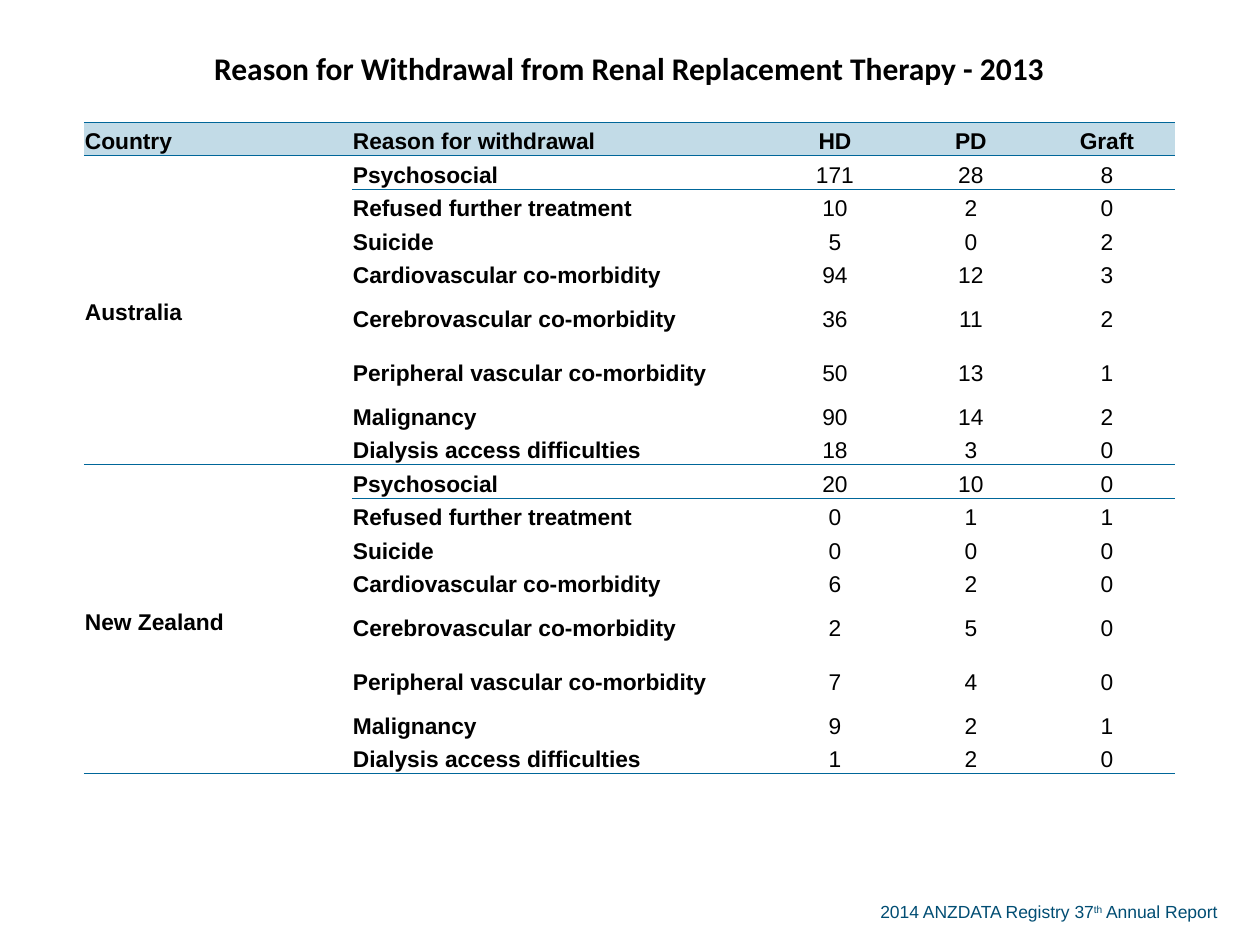
from lxml.etree import SubElement
from pptx import Presentation
from pptx.dml.color import RGBColor
from pptx.enum.text import MSO_ANCHOR, MSO_AUTO_SIZE, PP_ALIGN
from pptx.oxml.ns import qn
from pptx.util import Emu, Pt

PX = 914400 // 126
NO_STYLE_NO_GRID = "{2D5ABB26-0587-4C30-8999-92F81FD0307C}"

TITLE = "Reason for Withdrawal from Renal Replacement Therapy - 2013"
HEADINGS = ["Country", "Reason for withdrawal", "HD", "PD", "Graft"]
REASONS = [
    "Psychosocial",
    "Refused further treatment",
    "Suicide",
    "Cardiovascular co-morbidity",
    "Cerebrovascular co-morbidity",
    "Peripheral vascular co-morbidity",
    "Malignancy",
    "Dialysis access difficulties",
]
COUNTS = {
    "Australia": [(171, 28, 8), (10, 2, 0), (5, 0, 2), (94, 12, 3),
                  (36, 11, 2), (50, 13, 1), (90, 14, 2), (18, 3, 0)],
    "New Zealand": [(20, 10, 0), (0, 1, 1), (0, 0, 0), (6, 2, 0),
                    (2, 5, 0), (7, 4, 0), (9, 2, 1), (1, 2, 0)],
}
TALL_REASONS = REASONS[4:6]
COLUMN_WIDTHS = [268, 415, 136, 136, 136]
TITLE_HEIGHT, ROW_HEIGHT, TALL_HEIGHT = 106, 33, 54


def px(length):
    return Emu(length * PX)


def color(hex_string):
    return RGBColor.from_string(hex_string)


class SlideBuilder:
    font = "Arial"
    title_font = "Calibri"
    text = "000000"
    footer = "004D73"
    rule = "006699"
    header_fill = "C2DBE7"

    def __init__(self, slide):
        self.slide = slide

    def set_font(self, paragraph, size, hex_string, bold=False, name=None):
        font = paragraph.font
        font.name = name or self.font
        font.size = Pt(size)
        font.bold = bold
        font.color.rgb = color(hex_string)

    def table(self, left, top, widths, heights):
        frame = self.slide.shapes.add_table(
            len(heights), len(widths), px(left), px(top), px(sum(widths)), px(sum(heights)))
        table = frame.table
        table.first_row = table.horz_banding = False
        frame._element.find(".//" + qn("a:tableStyleId")).text = NO_STYLE_NO_GRID
        for column, width in zip(table.columns, widths):
            column.width = px(width)
        for row, height in zip(table.rows, heights):
            row.height = px(height)
        return table

    def cell(self, cell, text, bold=True, centered=False, edges="", fill=None):
        """Fill a body cell; edges names the ruled sides, T before B."""
        cell.text = text
        cell.vertical_anchor = MSO_ANCHOR.MIDDLE
        cell.margin_left = cell.margin_right = cell.margin_top = px(1)
        cell.margin_bottom = 0
        paragraph = cell.text_frame.paragraphs[0]
        paragraph.alignment = PP_ALIGN.CENTER if centered else PP_ALIGN.LEFT
        paragraph.line_spacing = 1.19
        paragraph.space_after = Pt(14)
        self.set_font(paragraph, 13, self.text, bold)
        for edge in edges:
            self.border(cell, edge)
        if fill:
            cell.fill.solid()
            cell.fill.fore_color.rgb = color(fill)
        else:
            cell.fill.background()

    def border(self, cell, edge):
        line = SubElement(cell._tc.get_or_add_tcPr(), qn(f"a:ln{edge}"), w=str(Pt(0.5)))
        SubElement(SubElement(line, qn("a:solidFill")), qn("a:srgbClr"), val=self.rule)

    def title_cell(self, cell, text):
        self.cell(cell, text, centered=True, edges="B")
        paragraph = cell.text_frame.paragraphs[0]
        paragraph.line_spacing = 1.0
        paragraph.space_after = Pt(0)
        self.set_font(paragraph, 18, self.text, True, self.title_font)

    def footer_text(self, left, top, width, height, before, superscript, after):
        box = self.slide.shapes.add_textbox(px(left), px(top), px(width), px(height))
        frame = box.text_frame
        frame.word_wrap = True
        frame.auto_size = MSO_AUTO_SIZE.SHAPE_TO_FIT_TEXT
        paragraph = frame.paragraphs[0]
        self.set_font(paragraph, 10, self.footer)
        for text in (before, superscript, after):
            run = paragraph.add_run()
            run.text = text
            if text == superscript:
                run._r.get_or_add_rPr().set("baseline", "30000")


def main():
    presentation = Presentation()
    presentation.slide_width, presentation.slide_height = px(1260), px(945)
    builder = SlideBuilder(presentation.slides.add_slide(presentation.slide_layouts[6]))

    builder.footer_text(868, 895, 377, 34, "2014 ANZDATA Registry 37", "th", " Annual Report")

    reason_heights = [TALL_HEIGHT if reason in TALL_REASONS else ROW_HEIGHT for reason in REASONS]
    heights = [TITLE_HEIGHT, ROW_HEIGHT] + reason_heights * len(COUNTS)
    table = builder.table(84, 16, COLUMN_WIDTHS, heights)

    for column, heading in enumerate(HEADINGS):
        builder.title_cell(table.cell(0, column), "" if column else TITLE)
        builder.cell(table.cell(1, column), heading, centered=column > 1,
                     edges="TB", fill=builder.header_fill)
    table.cell(0, 0).merge(table.cell(0, len(HEADINGS) - 1))

    last = len(REASONS) - 1
    for group, (country, counts) in enumerate(COUNTS.items()):
        first_row = 2 + group * len(REASONS)
        for index, (reason, values) in enumerate(zip(REASONS, counts)):
            row = first_row + index
            edges = {0: "T", last: "B"}.get(index, "")
            builder.cell(table.cell(row, 0), "" if index else country,
                         edges=edges if index else "TB")
            builder.cell(table.cell(row, 1), reason, edges=edges)
            for column, value in enumerate(values, start=2):
                builder.cell(table.cell(row, column), str(value), bold=False,
                             centered=True, edges=edges)
        table.cell(first_row, 0).merge(table.cell(first_row + last, 0))

    presentation.save("out.pptx")


if __name__ == "__main__":
    main()
